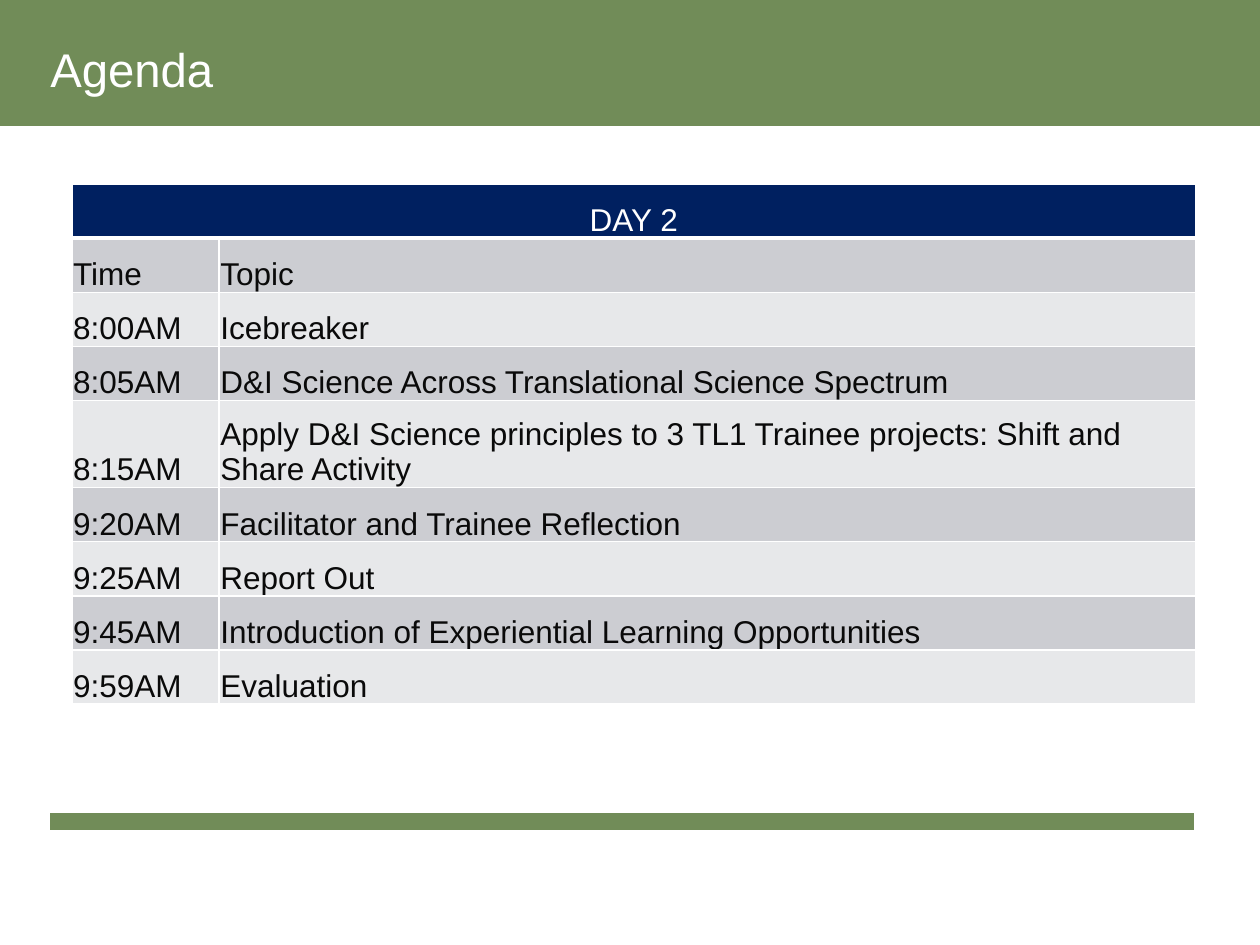
from lxml import etree
from pptx import Presentation
from pptx.dml.color import RGBColor
from pptx.enum.shapes import MSO_CONNECTOR, MSO_SHAPE
from pptx.enum.text import MSO_ANCHOR, PP_ALIGN
from pptx.oxml.ns import qn
from pptx.util import Inches, Pt

RECTANGLE = MSO_SHAPE.RECTANGLE
STRAIGHT = MSO_CONNECTOR.STRAIGHT
TOP, BOTTOM = MSO_ANCHOR.TOP, MSO_ANCHOR.BOTTOM
LEFT, CENTER = PP_ALIGN.LEFT, PP_ALIGN.CENTER

FONT = "Arial"
GREEN, NAVY, WHITE, INK = "718C58", "002060", "FFFFFF", "0A0A0A"
BANDS = ("CCCDD2", "E7E8EA")
COLUMN_WIDTHS = (1.17, 7.75)
ROW_HEIGHT, TALL_ROW_HEIGHT = 0.43, 0.69
TALL_ROW = 4

HEADING = "DAY 2"
AGENDA = (
    ("Time", "Topic"),
    ("8:00AM", "Icebreaker"),
    ("8:05AM", "D&I Science Across Translational Science Spectrum"),
    ("8:15AM", "Apply D&I Science principles to 3 TL1 Trainee projects: "
               "Shift and Share Activity"),
    ("9:20AM", "Facilitator and Trainee Reflection"),
    ("9:25AM", "Report Out"),
    ("9:45AM", "Introduction of Experiential Learning Opportunities"),
    ("9:59AM", "Evaluation"),
)


def color(value):
    return RGBColor.from_string(value)


def write(para, text, size, ink, align=LEFT):
    para.alignment = align
    span = para.add_run()
    span.text = text
    span.font.name = FONT
    span.font.size = Pt(size)
    span.font.color.rgb = color(ink)


def add_band(page, left, top, width, height, fill):
    band = page.shapes.add_shape(RECTANGLE, Inches(left), Inches(top),
                                 Inches(width), Inches(height))
    band.shadow.inherit = False
    band.fill.solid()
    band.fill.fore_color.rgb = color(fill)
    band.line.fill.background()


def add_title(page, text):
    box = page.shapes.add_textbox(Inches(0.4), Inches(0.22),
                                  Inches(1.79), Inches(1.03))
    frame = box.text_frame
    frame.word_wrap = True
    frame.vertical_anchor = TOP
    frame.margin_left = frame.margin_right = 0
    frame.margin_top, frame.margin_bottom = Inches(0.1), Inches(0.05)
    write(frame.paragraphs[0], text, 27, WHITE)


def add_rule(page, left, right, top, ink, width):
    rule = page.shapes.add_connector(STRAIGHT, Inches(left), Inches(top),
                                     Inches(right), Inches(top))
    rule.line.color.rgb = color(ink)
    rule.line.width = Pt(width)
    etree.SubElement(rule._element.spPr, qn("a:effectLst"))


def style_cell(cell, fill, top=1, bottom=1):
    cell.vertical_anchor = BOTTOM
    cell.margin_left = cell.margin_right = cell.margin_top = Inches(0.01)
    cell.margin_bottom = 0
    properties = cell._tc.get_or_add_tcPr()
    # Borders come before the fill in the cell properties
    for side, width in (("L", 1), ("R", 1), ("T", top), ("B", bottom)):
        border = etree.SubElement(properties, qn(f"a:ln{side}"), w=str(Pt(width)))
        solid = etree.SubElement(border, qn("a:solidFill"))
        etree.SubElement(solid, qn("a:srgbClr"), val=WHITE)
    cell.fill.solid()
    cell.fill.fore_color.rgb = color(fill)


def add_agenda(page):
    row_count = len(AGENDA) + 1
    heights = [TALL_ROW_HEIGHT if index == TALL_ROW else ROW_HEIGHT
               for index in range(row_count)]
    table = page.shapes.add_table(
        row_count, len(COLUMN_WIDTHS), Inches(0.57), Inches(1.46),
        Inches(sum(COLUMN_WIDTHS)), Inches(sum(heights))).table
    for column, width in zip(table.columns, COLUMN_WIDTHS):
        column.width = Inches(width)
    for row, height in zip(table.rows, heights):
        row.height = Inches(height)

    # Heading across both columns
    heading = table.cell(0, 0)
    heading.merge(table.cell(0, 1))
    for cell in table.rows[0].cells:
        style_cell(cell, NAVY, bottom=3)
    write(heading.text_frame.paragraphs[0], HEADING, 18, WHITE, CENTER)

    # Banded rows
    for index, entry in enumerate(AGENDA):
        for cell, text in zip(table.rows[index + 1].cells, entry):
            style_cell(cell, BANDS[index % 2], top=3 if index == 0 else 1)
            write(cell.text_frame.paragraphs[0], text, 18, INK)


def main():
    deck = Presentation()
    deck.slide_width, deck.slide_height = Inches(10), Inches(7.5)
    page = deck.slides.add_slide(deck.slide_layouts[6])
    add_band(page, 0, 0, 10, 1, GREEN)
    add_title(page, "Agenda")
    add_rule(page, 0.4, 9.48, 6.52, GREEN, 10)
    add_agenda(page)
    deck.save("out.pptx")


if __name__ == "__main__":
    main()
